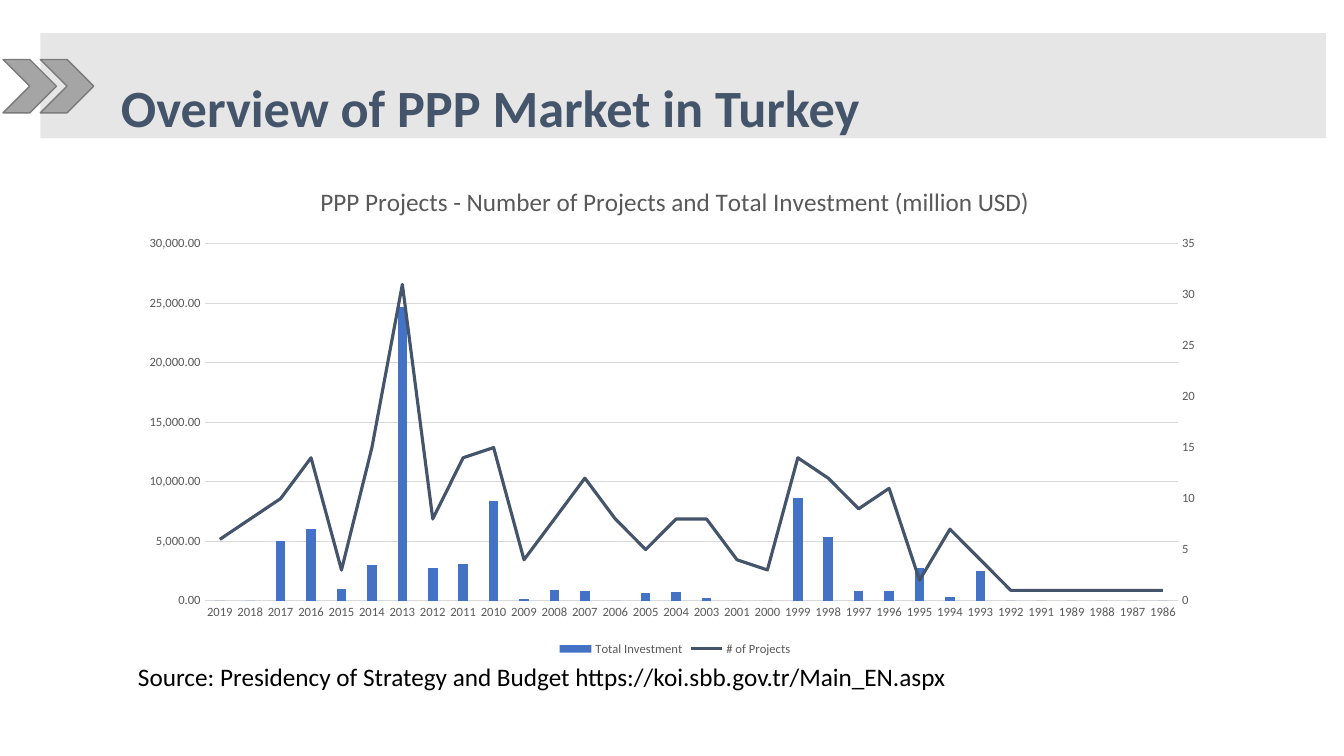
from copy import deepcopy
from lxml.etree import SubElement
from pptx import Presentation
from pptx.chart.data import CategoryChartData
from pptx.dml.color import RGBColor
from pptx.enum.chart import XL_CHART_TYPE, XL_LEGEND_POSITION, XL_TICK_MARK
from pptx.enum.shapes import MSO_SHAPE
from pptx.enum.text import MSO_ANCHOR, PP_ALIGN
from pptx.oxml import parse_xml
from pptx.oxml.ns import qn
from pptx.util import Inches, Pt

FONT = "Calibri"
COLORS = {"band": "E7E6E6", "navy": "44546A", "arrow": "A5A5A5", "edge": "7A7A7A",
          "bar": "4472C4", "label": "595959", "grid": "D9D9D9", "black": "000000"}
TITLE = "Overview of PPP Market in Turkey"
SOURCE = "Source: Presidency of Strategy and Budget https://koi.sbb.gov.tr/Main_EN.aspx"
CHART_TITLE = "PPP Projects - Number of Projects and Total Investment (million USD)"
YEARS = [str(year) for year in range(2019, 1985, -1) if year not in (2002, 1990)]
INVESTMENT = [0, 0, 5000, 6000, 1000, 3000, 24700, 2700, 3100, 8400, 100, 900, 800, 0, 600, 700,
              200, 0, 0, 8600, 5300, 800, 800, 2700, 300, 2500, 0, 0, 0, 0, 0, 0]
PROJECTS = [6, 8, 10, 14, 3, 15, 31, 8, 14, 15, 4, 8, 12, 8, 5, 8,
            8, 4, 3, 14, 12, 9, 11, 2, 7, 4, 1, 1, 1, 1, 1, 1]
BAND = (0.4, 0.33, 12.75, 1.04)
CHEVRONS = [(0.03, 0.59, 0.53, 0.53), (0.4, 0.59, 0.53, 0.53)]
CHART = (1.27, 1.63, 10.85, 4.92)
NOTE = (1.27, 6.51, 11.15, 0.4)
PLOT = {"x": 0.07, "y": 0.16, "w": 0.89, "h": 0.72}  # shares of the chart frame


def color(name):
    return RGBColor.from_string(COLORS[name])


def place(box):
    return [Inches(length) for length in box]


def style(font, size, name, bold=False):
    font.name, font.size, font.bold = FONT, Pt(size), bold
    font.color.rgb = color(name)


def add_run(frame, text, size, name, bold=False):
    para = frame.paragraphs[0]
    para.alignment = PP_ALIGN.LEFT
    run = para.add_run()
    run.text = text
    style(run.font, size, name, bold)


def add_block(slide, kind, box, fill, edge=None):
    shape = slide.shapes.add_shape(kind, *place(box))
    shape.shadow.inherit = False
    shape.fill.solid()
    shape.fill.fore_color.rgb = color(fill)
    if edge:
        shape.line.color.rgb = color(edge)
        shape.line.width = Pt(1)
    else:
        shape.line.fill.background()
    return shape


def add_node(parent, tag, val):
    SubElement(parent, qn(tag)).set("val", str(val))


def set_node(parent, tag, val):
    parent.find(qn(tag)).set("val", str(val))


def set_layout(area):
    """Fix the inner plot area at the shares in PLOT."""
    old = area.find(qn("c:layout"))
    if old is not None:
        area.remove(old)
    layout = parse_xml('<c:layout xmlns:c="http://schemas.openxmlformats.org/'
                       'drawingml/2006/chart"><c:manualLayout/></c:layout>')
    manual = layout[0]
    add_node(manual, "c:layoutTarget", "inner")
    for side in "xy":
        add_node(manual, f"c:{side}Mode", "edge")
    for key, share in PLOT.items():
        add_node(manual, f"c:{key}", share)
    area.insert(0, layout)


def split_line(area):
    """Move the second series to a line plot with its own right axis."""
    bars = area.find(qn("c:barChart"))
    series = bars.findall(qn("c:ser"))[1]
    flag = series.find(qn("c:invertIfNegative"))
    if flag is not None:
        series.remove(flag)
    lines = parse_xml('<c:lineChart xmlns:c="http://schemas.openxmlformats.org/'
                      'drawingml/2006/chart"/>')
    add_node(lines, "c:grouping", "standard")
    add_node(lines, "c:varyColors", 0)
    lines.append(series)
    marker = parse_xml('<c:marker xmlns:c="http://schemas.openxmlformats.org/'
                       'drawingml/2006/chart"><c:symbol val="none"/></c:marker>')
    series.find(qn("c:cat")).addprevious(marker)
    add_node(lines, "c:marker", 1)
    cat_id, val_id = 5001, 5002
    for axis_id in (cat_id, val_id):
        add_node(lines, "c:axId", axis_id)
    bars.addnext(lines)

    left = area.find(qn("c:valAx"))
    right, hidden = deepcopy(left), deepcopy(area.find(qn("c:catAx")))
    for axis, own, cross in ((right, val_id, cat_id), (hidden, cat_id, val_id)):
        set_node(axis, "c:axId", own)
        set_node(axis, "c:crossAx", cross)
    right.remove(right.find(qn("c:majorGridlines")))
    right.find(qn("c:numFmt")).set("formatCode", "General")
    set_node(right.find(qn("c:scaling")), "c:max", 35)
    set_node(right, "c:majorUnit", 5)
    set_node(right, "c:axPos", "r")
    set_node(right, "c:crosses", "max")
    set_node(hidden, "c:delete", 1)
    left.addnext(right)
    right.addnext(hidden)


def add_combo(slide):
    data = CategoryChartData()
    data.categories = YEARS
    data.add_series("Total Investment", INVESTMENT)
    data.add_series("# of Projects", PROJECTS)
    chart = slide.shapes.add_chart(XL_CHART_TYPE.COLUMN_CLUSTERED, *place(CHART), data).chart
    style(chart.font, 10, "black")
    add_run(chart.chart_title.text_frame, CHART_TITLE, 18, "label")
    chart.chart_title.text_frame.paragraphs[0].alignment = PP_ALIGN.CENTER
    chart.chart_title.include_in_layout = False
    chart.has_legend = True
    chart.legend.position = XL_LEGEND_POSITION.BOTTOM
    chart.legend.include_in_layout = False
    style(chart.legend.font, 9, "label")

    years, money = chart.category_axis, chart.value_axis
    for axis in (years, money):
        style(axis.tick_labels.font, 9, "label")
        axis.major_tick_mark = axis.minor_tick_mark = XL_TICK_MARK.NONE
    grid = money.major_gridlines
    for line in (years.format.line, grid.format.line):
        line.color.rgb = color("grid")
        line.width = Pt(0.75)
    money.format.line.fill.background()
    money.minimum_scale, money.maximum_scale, money.major_unit = 0, 30000, 5000
    money.tick_labels.number_format = "#,##0.00"
    money.tick_labels.number_format_is_linked = False

    bars = chart.plots[0]
    bars.gap_width, bars.vary_by_categories = 219, False
    fill = bars.series[0].format.fill
    fill.solid()
    fill.fore_color.rgb = color("bar")
    area = money._element.getparent()
    split_line(area)
    set_layout(area)
    trend = chart.plots[1].series[0]
    trend.smooth = False
    trend.format.line.color.rgb = color("navy")
    trend.format.line.width = Pt(2.25)


def main():
    deck = Presentation()
    deck.slide_width, deck.slide_height = Inches(13.33), Inches(7.5)
    slide = deck.slides.add_slide(deck.slide_layouts[6])
    band = add_block(slide, MSO_SHAPE.RECTANGLE, BAND, "band").text_frame
    band.vertical_anchor = MSO_ANCHOR.BOTTOM
    band.margin_left, band.margin_bottom = Inches(0.8), 0
    add_run(band, TITLE, 37.4, "navy", True)
    for box in CHEVRONS:
        add_block(slide, MSO_SHAPE.CHEVRON, box, "arrow", "edge")
    note = slide.shapes.add_textbox(*place(NOTE)).text_frame
    note.word_wrap = True
    add_run(note, SOURCE, 18, "black")
    add_combo(slide)
    deck.save("out.pptx")


if __name__ == "__main__":
    main()
